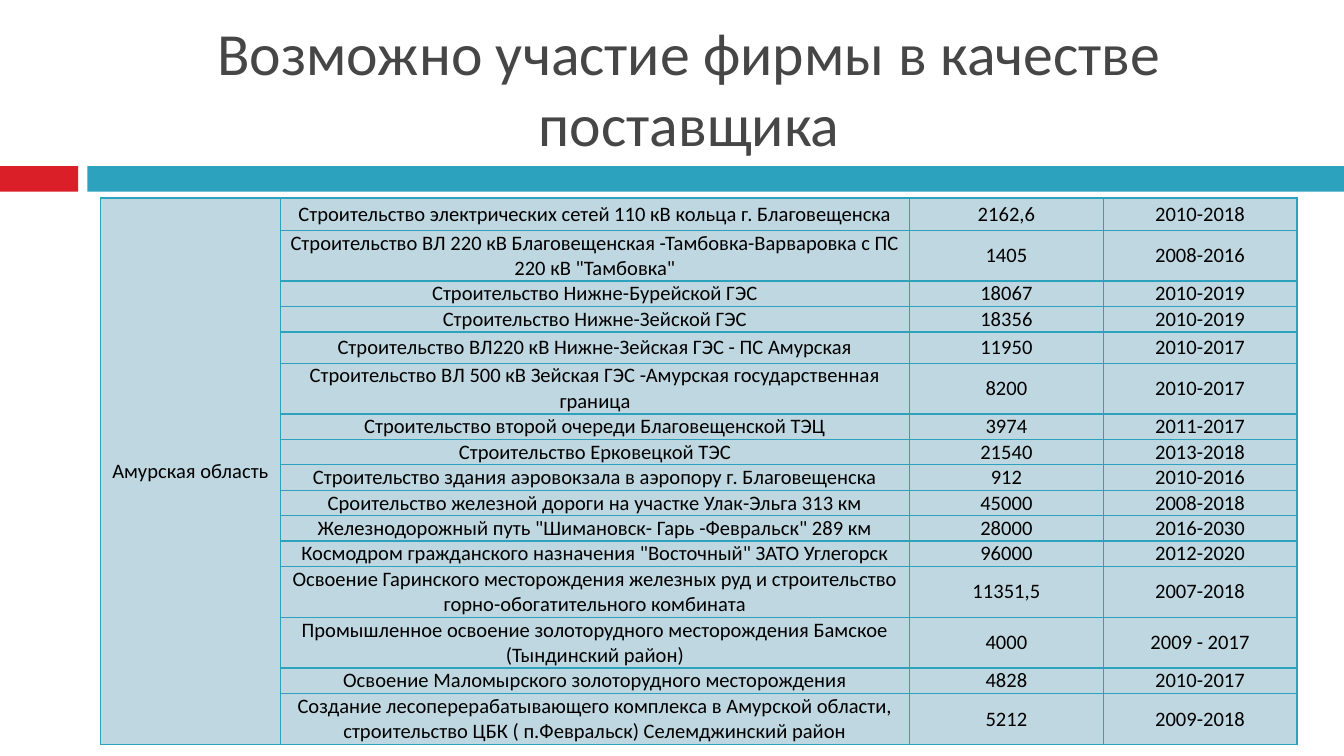
"""Build a slide listing Amur region projects open to the firm as a supplier."""
from typing import NamedTuple

from lxml import etree
from pptx import Presentation, util as u
from pptx.dml.color import RGBColor
from pptx.enum import shapes, text
from pptx.oxml import ns

FONT = "Calibri"
COLORS = {
    "red": "DA1F28",
    "teal": "2DA2BF",
    "cell": "BFD7E0",
    "title": "464646",
    "body": "000000",
}
REGION = "Амурская область"
COLUMN_WIDTHS = (3.4, 11.89, 3.66, 3.66)
ONE_LINE, TWO_LINES = 0.48, 0.96


class Bar(NamedTuple):
    left: float
    width: float
    color: str


class Project(NamedTuple):
    name: str
    cost: str
    years: str
    height: float = ONE_LINE


BARS = (Bar(0, 1.48, "red"), Bar(1.65, 23.75, "teal"))
PROJECTS = (
    Project("Строительство электрических сетей 110 кВ кольца г. Благовещенска", "2162,6", "2010-2018", 0.61),
    Project('Строительство ВЛ 220 кВ Благовещенская -Тамбовка-Варваровка с ПС 220 кВ "Тамбовка"',
            "1405", "2008-2016", TWO_LINES),
    Project("Строительство Нижне-Бурейской ГЭС", "18067", "2010-2019"),
    Project("Строительство Нижне-Зейской ГЭС", "18356", "2010-2019"),
    Project("Строительство ВЛ220 кВ Нижне-Зейская ГЭС - ПС Амурская", "11950", "2010-2017", 0.59),
    Project("Строительство ВЛ 500 кВ Зейская ГЭС -Амурская государственная граница",
            "8200", "2010-2017", TWO_LINES),
    Project("Строительство второй очереди Благовещенской ТЭЦ", "3974", "2011-2017"),
    Project("Строительство Ерковецкой ТЭС", "21540", "2013-2018"),
    Project("Строительство здания аэровокзала в аэропору г. Благовещенска", "912", "2010-2016"),
    Project("Сроительство железной дороги на участке Улак-Эльга 313 км", "45000", "2008-2018"),
    Project('Железнодорожный путь "Шимановск- Гарь -Февральск" 289 км', "28000", "2016-2030"),
    Project('Космодром гражданского назначения "Восточный" ЗАТО Углегорск', "96000", "2012-2020"),
    Project("Освоение Гаринского месторождения железных руд и строительство горно-обогатительного комбината",
            "11351,5", "2007-2018", TWO_LINES),
    Project("Промышленное освоение золоторудного месторождения Бамское (Тындинский район)",
            "4000", "2009 - 2017", TWO_LINES),
    Project("Освоение Маломырского золоторудного месторождения", "4828", "2010-2017"),
    Project("Создание лесоперерабатывающего комплекса в Амурской области, "
            "строительство ЦБК ( п.Февральск) Селемджинский район", "5212", "2009-2018", TWO_LINES),
)


def rgb(name: str) -> RGBColor:
    """Return a palette colour."""
    return RGBColor.from_string(COLORS[name])


def write(frame, words: str, size: float, color: str) -> None:
    """Put one centred run into a text frame."""
    paragraph = frame.paragraphs[0]
    paragraph.alignment = text.PP_ALIGN.CENTER
    run = paragraph.add_run()
    run.text = words
    run.font.name = FONT
    run.font.size = u.Pt(size)
    run.font.color.rgb = rgb(color)


def draw_title(slide) -> None:
    """Place and fill the title placeholder."""
    title = slide.shapes.title
    title.left, title.top, title.width, title.height = map(u.Cm, (1.7, 0.33, 22.66, 2.8))
    frame = title.text_frame
    frame.word_wrap = True
    frame.auto_size = text.MSO_AUTO_SIZE.NONE
    frame.vertical_anchor = text.MSO_ANCHOR.BOTTOM
    frame.margin_top, frame.margin_bottom = 0, u.Cm(0.13)
    write(frame, "Возможно участие фирмы в качестве поставщика", 32, "title")


def draw_bar(slide, bar: Bar) -> None:
    """Draw one part of the band under the title."""
    shape = slide.shapes.add_shape(
        shapes.MSO_SHAPE.RECTANGLE, u.Cm(bar.left), u.Cm(3.14), u.Cm(bar.width), u.Cm(0.48))
    shape.shadow.inherit = False
    shape.fill.solid()
    shape.fill.fore_color.rgb = rgb(bar.color)
    shape.line.fill.background()


def format_cell(cell) -> None:
    """Give a cell its borders, fill, margins and anchor."""
    properties = cell._tc.get_or_add_tcPr()
    for side in ("lnL", "lnR", "lnT", "lnB"):
        line = etree.SubElement(properties, ns.qn(f"a:{side}"), w=str(u.Pt(0.79)))
        fill = etree.SubElement(line, ns.qn("a:solidFill"))
        etree.SubElement(fill, ns.qn("a:srgbClr"), val=COLORS["teal"])
    cell.fill.solid()
    cell.fill.fore_color.rgb = rgb("cell")
    cell.margin_left = cell.margin_right = cell.margin_top = cell.margin_bottom = 0
    cell.vertical_anchor = text.MSO_ANCHOR.MIDDLE


def draw_table(slide) -> None:
    """Draw the project table with the region spanning every row."""
    height = sum(project.height for project in PROJECTS)
    table = slide.shapes.add_table(
        len(PROJECTS), len(COLUMN_WIDTHS), u.Cm(1.9), u.Cm(3.74),
        u.Cm(sum(COLUMN_WIDTHS)), u.Cm(height)).table
    table.first_row = table.horz_banding = False
    for column, width in zip(table.columns, COLUMN_WIDTHS):
        column.width = u.Cm(width)
    for index, (row, project) in enumerate(zip(table.rows, PROJECTS)):
        row.height = u.Cm(project.height)
        region = REGION if index == 0 else ""
        for cell, words in zip(row.cells, (region, project.name, project.cost, project.years)):
            format_cell(cell)
            write(cell.text_frame, words, 11, "body")
    table.cell(0, 0).merge(table.cell(len(PROJECTS) - 1, 0))


def main() -> None:
    """Build and save the presentation."""
    presentation = Presentation()
    presentation.slide_width, presentation.slide_height = u.Cm(25.4), u.Cm(14.28)
    slide = presentation.slides.add_slide(presentation.slide_layouts[5])
    for bar in BARS:
        draw_bar(slide, bar)
    draw_table(slide)
    draw_title(slide)
    presentation.save("out.pptx")


if __name__ == "__main__":
    main()
